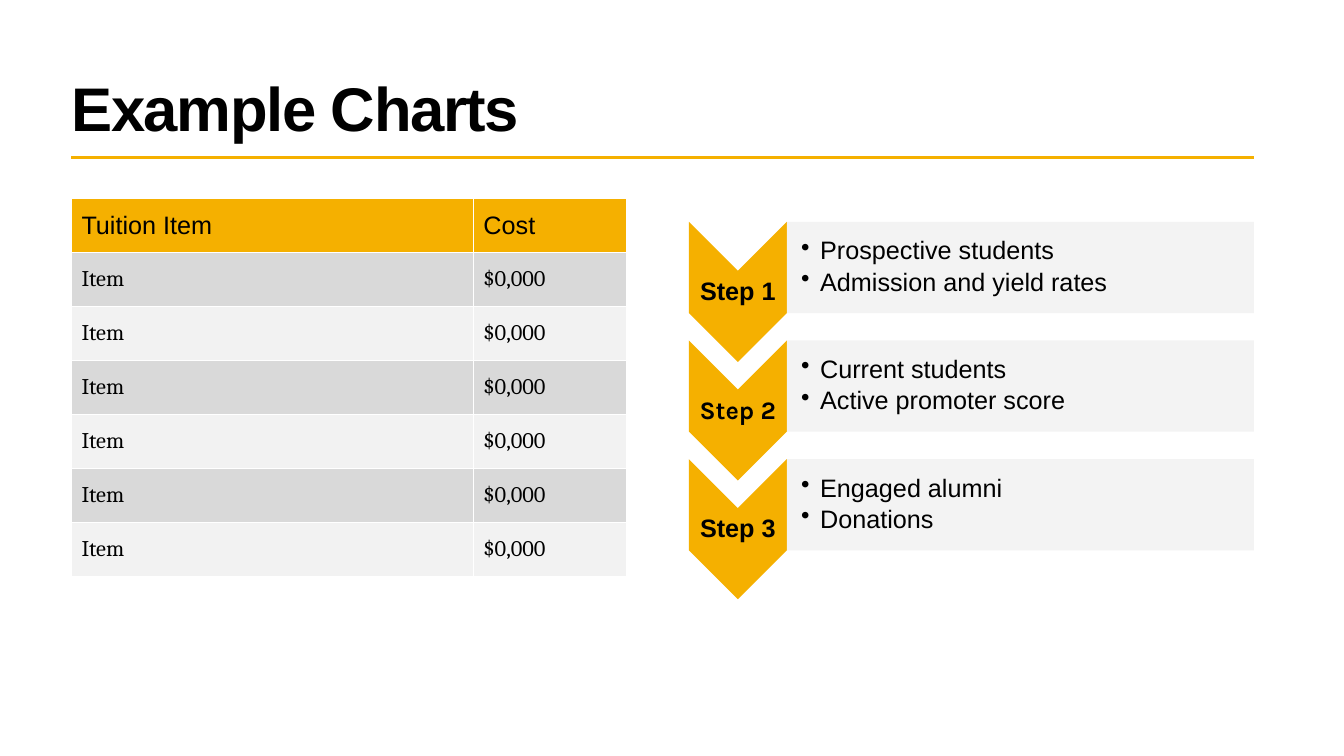
from lxml.etree import SubElement
from pptx import Presentation
from pptx.dml.color import RGBColor
from pptx.enum.shapes import MSO_CONNECTOR, MSO_SHAPE
from pptx.enum.text import MSO_ANCHOR, PP_ALIGN
from pptx.oxml.ns import qn
from pptx.util import Cm, Pt

TITLE = "Example Charts"
COSTS = [("Tuition Item", "Cost")] + [("Item", "$0,000")] * 6
STEPS = [
    ("Step 1", "Arial", ["Prospective students", "Admission and yield rates"]),
    ("Step 2", "Karla", ["Current students", "Active promoter score"]),
    ("Step 3", "Arial", ["Engaged alumni", "Donations"]),
]
GOLD, BLACK, DARK_BAND, LIGHT_BAND = "F5B000", "000000", "D9D9D9", "F2F2F2"

LEFT, RIGHT = 1.8, 31.6
COST_TOP, COST_COLUMNS, COST_ROW = 5.0, (10.13, 3.86), 1.36
STEP_LEFT, STEP_TOP, STEP_PITCH = 17.36, 5.59, 2.99
ARROW_WIDTH, ARROW_HEIGHT = 2.47, 3.53
LABEL_OFFSET, LABEL_HEIGHT = 1.24, 1.07
PANEL_HEIGHT, PANEL_INDENT, BULLET_INDENT = 2.3, 0.36, 0.48
THIN_INSET = 0.03


def paint(color_format, value):
    color_format.rgb = RGBColor.from_string(value)


def fill_with(target, value):
    target.fill.solid()
    paint(target.fill.fore_color, value)


def style(paragraph, size, name="Arial", bold=False):
    for run in paragraph.runs:
        run.font.size = Pt(size)
        run.font.name = name
        run.font.bold = bold
        paint(run.font.color, BLACK)


def prepare(frame, left_inset=THIN_INSET):
    frame.word_wrap = True
    frame.vertical_anchor = MSO_ANCHOR.MIDDLE
    frame.margin_left = Cm(left_inset)
    frame.margin_top = frame.margin_right = frame.margin_bottom = Cm(THIN_INSET)


def add_plain_shape(slide, kind, left, top, width, height, color):
    shape = slide.shapes.add_shape(kind, Cm(left), Cm(top), Cm(width), Cm(height))
    shape.shadow.inherit = False
    fill_with(shape, color)
    shape.line.fill.background()
    return shape


def add_heading(slide):
    rule = slide.shapes.add_connector(
        MSO_CONNECTOR.STRAIGHT, Cm(LEFT), Cm(3.96), Cm(RIGHT), Cm(3.96))
    SubElement(rule._element.spPr, qn("a:effectLst"))
    rule.line.width = Pt(2.25)
    paint(rule.line.color, GOLD)

    title = slide.shapes.add_textbox(Cm(1.55), Cm(1.63), Cm(29.21), Cm(2.34))
    frame = title.text_frame
    frame.word_wrap = True
    frame.vertical_anchor = MSO_ANCHOR.MIDDLE
    frame.text = TITLE
    heading = frame.paragraphs[0]
    heading.line_spacing = 0.9
    style(heading, 44, bold=True)
    heading.runs[0].font._element.set("spc", "-100")


def add_costs(slide):
    costs = slide.shapes.add_table(
        len(COSTS), len(COST_COLUMNS), Cm(LEFT), Cm(COST_TOP),
        Cm(sum(COST_COLUMNS)), Cm(COST_ROW * len(COSTS))).table
    for column, width in zip(costs.columns, COST_COLUMNS):
        column.width = Cm(width)
    for r, entries in enumerate(COSTS):
        costs.rows[r].height = Cm(COST_ROW)
        band = GOLD if r == 0 else (LIGHT_BAND, DARK_BAND)[r % 2]
        size, name = (18, "Arial") if r == 0 else (16, "Cambria")
        for c, entry in enumerate(entries):
            cell = costs.cell(r, c)
            fill_with(cell, band)
            cell.vertical_anchor = MSO_ANCHOR.MIDDLE
            cell.text_frame.text = entry
            style(cell.text_frame.paragraphs[0], size, name)


def add_step(slide, top, label, label_font, points):
    shift = (ARROW_HEIGHT - ARROW_WIDTH) / 2
    arrow = add_plain_shape(slide, MSO_SHAPE.CHEVRON, STEP_LEFT - shift, top + shift,
                            ARROW_HEIGHT, ARROW_WIDTH, GOLD)
    arrow.rotation = 90

    caption = slide.shapes.add_textbox(
        Cm(STEP_LEFT), Cm(top + LABEL_OFFSET), Cm(ARROW_WIDTH), Cm(LABEL_HEIGHT))
    prepare(caption.text_frame)
    caption.text_frame.text = label
    caption_line = caption.text_frame.paragraphs[0]
    caption_line.alignment = PP_ALIGN.CENTER
    caption_line.line_spacing = 0.9
    style(caption_line, 18, label_font, bold=True)

    panel_left = STEP_LEFT + ARROW_WIDTH
    panel = add_plain_shape(slide, MSO_SHAPE.RECTANGLE, panel_left, top,
                            RIGHT - panel_left, PANEL_HEIGHT, LIGHT_BAND)
    tint = panel._element.spPr.find(qn("a:solidFill"))[0]
    SubElement(tint, qn("a:alpha"), val="90000")
    prepare(panel.text_frame, PANEL_INDENT)
    panel.text_frame.text = "\n".join(points)
    for point in panel.text_frame.paragraphs:
        properties = point._p.get_or_add_pPr()
        properties.set("marL", str(Cm(BULLET_INDENT)))
        properties.set("indent", str(-Cm(BULLET_INDENT)))
        SubElement(properties, qn("a:buChar"), char="•")
        point.alignment = PP_ALIGN.LEFT
        point.line_spacing = 0.9
        point.space_after = Pt(3)
        style(point, 18)


def main():
    deck = Presentation()
    deck.slide_width, deck.slide_height = Cm(33.87), Cm(19.05)
    slide = deck.slides.add_slide(deck.slide_layouts[6])
    add_heading(slide)
    add_costs(slide)
    for i, step in enumerate(STEPS):
        add_step(slide, STEP_TOP + i * STEP_PITCH, *step)
    deck.save("out.pptx")


if __name__ == "__main__":
    main()
